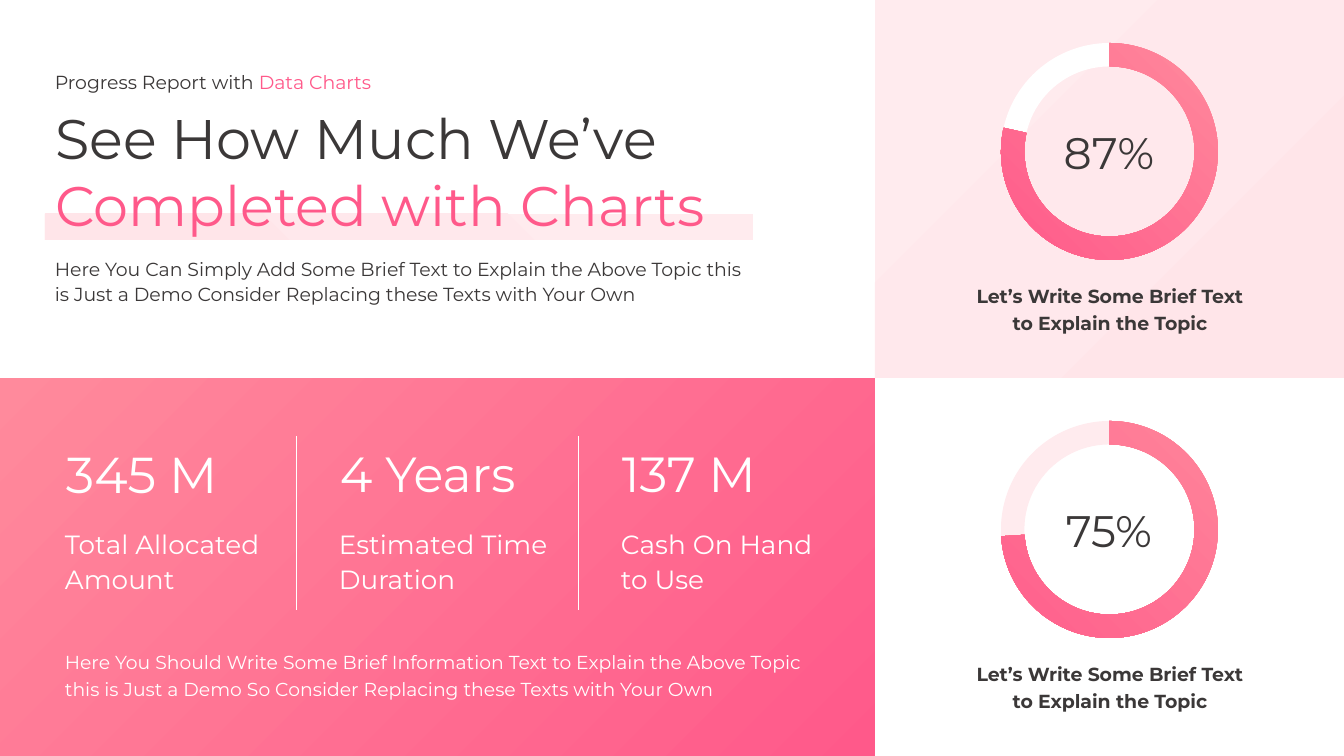
from dataclasses import dataclass

from lxml.etree import SubElement
from pptx import Presentation
from pptx.dml.color import RGBColor
from pptx.dml.fill import FillFormat
from pptx.enum.shapes import MSO_CONNECTOR, MSO_SHAPE as Kind
from pptx.enum.text import MSO_ANCHOR, MSO_AUTO_SIZE, PP_ALIGN as Align
from pptx.oxml.ns import qn
from pptx.shapes.autoshape import Shape
from pptx.shapes.shapetree import SlideShapes
from pptx.util import Emu, Pt

SCALE = 914400 / 100.8
WIDE, HIGH = 1344, 756
SPLIT, HALF = 875, 378
FONT = "Montserrat"
DARK, WHITE = "3B3838", "FFFFFF"
PINK = ("FF598A", "FF8A9C")
PALE = ("FFE5E9", "FFEBEE")
CAPTION = ("Let’s Write Some Brief Text", "to Explain the Topic")


@dataclass
class Box:
    left: int
    top: int
    width: int
    height: int


@dataclass
class Style:
    size: float
    color: str = DARK
    lead: int | None = None
    bold: bool = False
    align: Align = Align.LEFT
    wrap: bool = False


@dataclass
class Stat:
    left: int
    value: str
    size: float
    label: tuple[str, str]


@dataclass
class Ring:
    top: int
    value: str
    start: float
    turn: float
    track: tuple[str, ...]


STATS = (
    Stat(56, "345 M", 36, ("Total Allocated", "Amount")),
    Stat(330, "4 Years", 35.2, ("Estimated Time", "Duration")),
    Stat(612, "137 M", 35.2, ("Cash On Hand", "to Use")),
)
RINGS = (
    Ring(0, "87%", 161.94, 0, (WHITE,)),
    Ring(HALF, "75%", 171.62, 343.8, PALE),
)


def px(n: int) -> Emu:
    return Emu(round(n * SCALE))


def rgb(code: str) -> RGBColor:
    return RGBColor.from_string(code)


def blend(fill: FillFormat, pair: tuple[str, ...]) -> None:
    """Give a fill a two-colour gradient."""
    fill.gradient()
    for stop, code in zip(fill.gradient_stops, pair):
        stop.color.rgb = rgb(code)


def place(shape: Shape, box: Box) -> None:
    shape.left, shape.top = px(box.left), px(box.top)
    shape.width, shape.height = px(box.width), px(box.height)


def draw(shapes: SlideShapes, kind: Kind, box: Box, tones: tuple[str, ...],
         right: bool = False) -> Shape:
    """Add a filled shape; a gradient spreads from a lower corner."""
    shape = shapes.add_shape(kind, 0, 0, 0, 0)
    place(shape, box)
    shape.shadow.inherit = False
    shape.line.fill.background()
    if len(tones) == 1:
        shape.fill.solid()
        shape.fill.fore_color.rgb = rgb(tones[0])
        return shape
    blend(shape.fill, tones)
    grad = shape._element.spPr.find(qn("a:gradFill"))
    line = grad.find(qn("a:lin"))
    if line is not None:
        grad.remove(line)
    focus = SubElement(grad, qn("a:path"), {"path": "circle"})
    sides = {"l": "100000", "t": "100000"} if right else {"t": "100000", "r": "100000"}
    SubElement(focus, qn("a:fillToRect"), sides)
    return shape


def write(shape: Shape, box: Box, lines: tuple[str, ...], style: Style) -> None:
    """Fill a text shape; what follows a bar in a line is pink."""
    place(shape, box)
    frame = shape.text_frame
    frame.word_wrap = style.wrap
    frame.auto_size = MSO_AUTO_SIZE.SHAPE_TO_FIT_TEXT
    frame.vertical_anchor = MSO_ANCHOR.TOP
    for i, line in enumerate(lines):
        para = frame.add_paragraph() if i else frame.paragraphs[0]
        para.alignment = style.align
        if style.lead:
            para.line_spacing = Pt(style.lead)
        for accent, part in enumerate(line.split("|")):
            if not part:
                continue
            run = para.add_run()
            run.text = part
            font = run.font
            font.name, font.size, font.bold = FONT, Pt(style.size), style.bold
            if accent:
                blend(font.fill, PINK)
                font.fill.gradient_angle = 180
            else:
                font.color.rgb = rgb(style.color)


def label(shapes: SlideShapes, box: Box, lines: tuple[str, ...], style: Style) -> None:
    write(shapes.add_textbox(0, 0, 0, 0), box, lines, style)


def rule(shapes: SlideShapes, x: int, top: int, base: int) -> None:
    line = shapes.add_connector(MSO_CONNECTOR.STRAIGHT, px(x), px(top), px(x), px(base))
    line.line.color.rgb = rgb(WHITE)
    line.line.width = Pt(0.75)
    SubElement(line._element.spPr, qn("a:effectLst"))


def gauge(shapes: SlideShapes, ring: Ring) -> None:
    box = Box(1001, ring.top + 43, 217, 217)
    track = draw(shapes, Kind.DONUT, box, ring.track, True)
    track.adjustments[0] = 0.108
    arc = draw(shapes, Kind.BLOCK_ARC, box, PINK)
    arc.rotation = ring.turn
    for i, value in enumerate((ring.start, 115.57, 0.108)):
        arc.adjustments[i] = value
    label(shapes, Box(1050, ring.top + 120, 118, 63), (ring.value,),
          Style(31.5, align=Align.CENTER))
    label(shapes, Box(963, ring.top + 276, 294, 61), CAPTION,
          Style(13.5, lead=19, bold=True, align=Align.CENTER))


def header(shapes: SlideShapes) -> None:
    draw(shapes, Kind.RECTANGLE, Box(45, 214, 708, 26), PALE)
    title = shapes.title
    shapes._spTree.append(title._element)
    write(title, Box(45, 99, 717, 145),
          ("See How Much We’ve", "|Completed with Charts"), Style(39.8))
    label(shapes, Box(45, 66, 344, 33), ("Progress Report with |Data Charts",), Style(13.5))
    label(shapes, Box(45, 250, 732, 59),
          ("Here You Can Simply Add Some Brief Text to Explain the Above Topic this",
           "is Just a Demo Consider Replacing these Texts with Your Own"),
          Style(13.5, lead=18))


def figures(shapes: SlideShapes) -> None:
    draw(shapes, Kind.RECTANGLE, Box(0, HALF, SPLIT, HALF), PINK, True)
    for stat in STATS:
        label(shapes, Box(stat.left, 438, 217, 70), (stat.value,), Style(stat.size, WHITE))
        label(shapes, Box(stat.left - 1, 520, 231, 74), stat.label, Style(18.8, WHITE, 25))
    for x in (297, 579):
        rule(shapes, x, 436, 610)
    label(shapes, Box(55, 642, 799, 61),
          ("Here You Should Write Some Brief Information Text to Explain the Above Topic",
           "this is Just a Demo So Consider Replacing these Texts with Your Own"),
          Style(13.4, WHITE, 19, wrap=True))


def main() -> None:
    deck = Presentation()
    deck.slide_width, deck.slide_height = px(WIDE), px(HIGH)
    shapes = deck.slides.add_slide(deck.slide_layouts[5]).shapes
    draw(shapes, Kind.RECTANGLE, Box(SPLIT, 0, WIDE - SPLIT, HALF), PALE, True)
    header(shapes)
    figures(shapes)
    for ring in RINGS:
        gauge(shapes, ring)
    deck.save("out.pptx")


if __name__ == "__main__":
    main()
